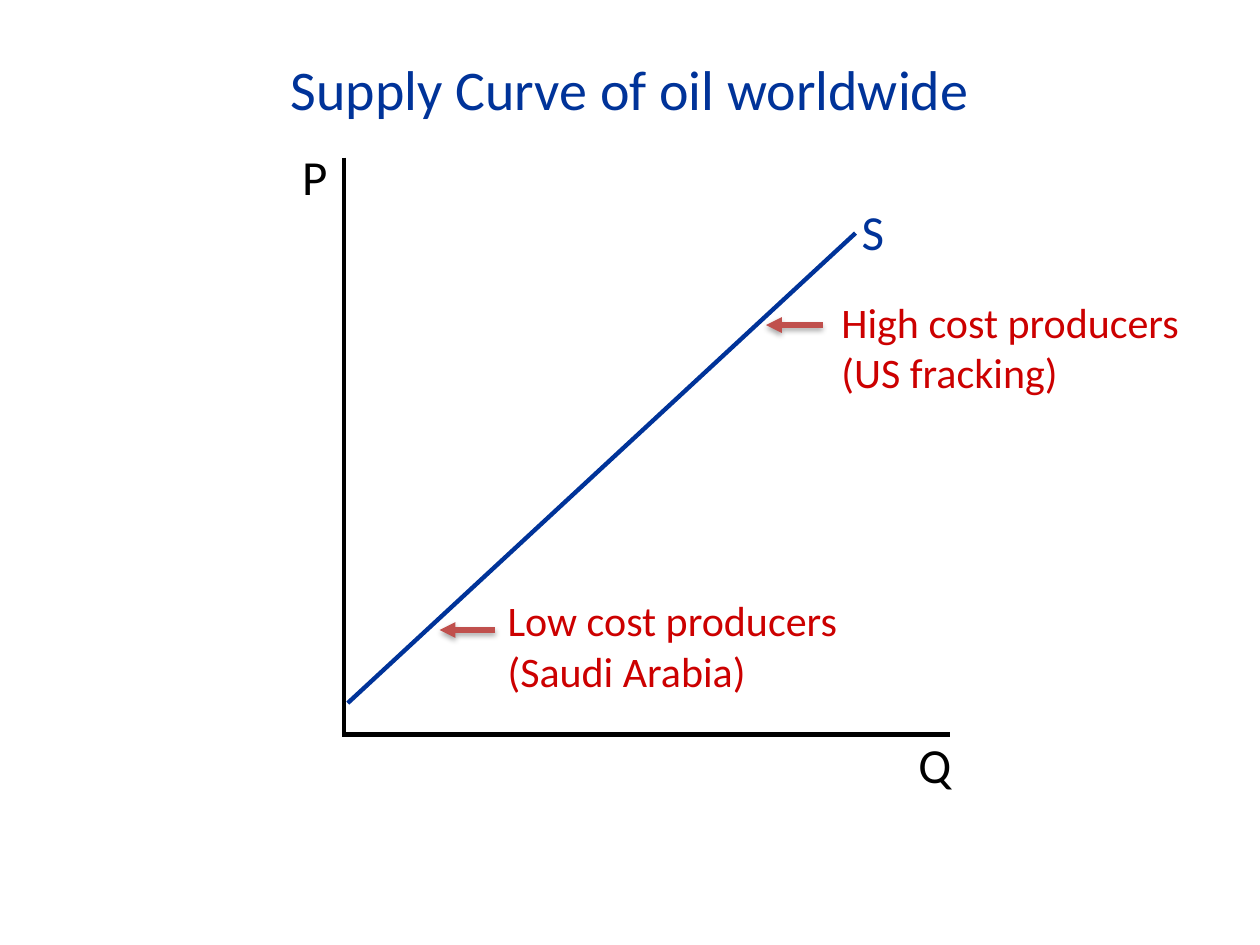
from dataclasses import dataclass

from lxml.etree import SubElement
from pptx import Presentation
from pptx.dml.color import RGBColor
from pptx.enum.shapes import MSO_CONNECTOR as Connector
from pptx.enum.text import MSO_ANCHOR as Anchor, MSO_AUTO_SIZE as AutoSize, PP_ALIGN as Align
from pptx.oxml.ns import qn
from pptx.util import Emu, Pt

PX = 9144  # EMU per px, 100 px to the inch


@dataclass(frozen=True)
class Theme:
    font: str = "Calibri"
    blue: str = "003399"
    black: str = "000000"
    red: str = "CC0000"
    arrow: str = "C0504D"
    title_size: int = 32
    label_size: int = 28
    note_size: int = 24
    line_width: float = 2.5
    arrow_width: float = 3


@dataclass(frozen=True)
class Label:
    lines: tuple[str, ...]
    left: int
    top: int
    width: int
    height: int
    size: int
    color: str
    align: Align = Align.LEFT
    anchor: Anchor = Anchor.TOP
    spacing: float = 1.0


@dataclass(frozen=True)
class Line:
    x1: int
    y1: int
    x2: int
    y2: int
    color: str
    width: float = Theme.line_width
    arrow: bool = False


@dataclass(frozen=True)
class Producer:
    lines: tuple[str, ...]
    left: int
    top: int
    arrow_from: int
    arrow_to: int
    arrow_y: int


T = Theme()

TITLE = Label(("Supply Curve of oil worldwide",), 70, 38, 860, 64,
              T.title_size, T.blue, Align.CENTER, Anchor.MIDDLE)
GRAPH_LINES = (
    Line(276, 558, 679, 185, T.blue),
    Line(273, 125, 273, 585, T.black),
    Line(274, 583, 754, 583, T.black),
)
GRAPH_LABELS = (
    Label(("Q",), 719, 578, 51, 57, T.label_size, T.black),
    Label(("P",), 230, 120, 45, 49, T.label_size, T.black, spacing=0.8),
    Label(("S",), 674, 155, 58, 57, T.label_size, T.blue),
)
PRODUCERS = (
    Producer(("Low cost producers", "(Saudi Arabia)"), 393, 467, 393, 349, 500),
    Producer(("High cost producers", "(US fracking)"), 658, 230, 653, 608, 258),
)


def px(n: int) -> Emu:
    return Emu(n * PX)


def add_label(shapes, label: Label) -> None:
    sp = shapes.add_textbox(px(label.left), px(label.top), px(label.width), px(label.height))
    tf = sp.text_frame
    tf.word_wrap = True
    tf.auto_size = AutoSize.SHAPE_TO_FIT_TEXT
    tf.vertical_anchor = label.anchor
    for i, text in enumerate(label.lines):
        p = tf.add_paragraph() if i else tf.paragraphs[0]
        p.alignment = label.align
        p.line_spacing = label.spacing
        r = p.add_run()
        r.text = text
        r.font.name = T.font
        r.font.size = Pt(label.size)
        r.font.color.rgb = RGBColor.from_string(label.color)


def add_line(shapes, line: Line) -> None:
    """Draw a plain line, or a shadowed arrow pointing at its end."""
    cx = shapes.add_connector(Connector.STRAIGHT, px(line.x1), px(line.y1),
                              px(line.x2), px(line.y2))
    cx.line.color.rgb = RGBColor.from_string(line.color)
    cx.line.width = Pt(line.width)
    sp_pr = cx._element.spPr
    effects = SubElement(sp_pr, qn("a:effectLst"))
    if line.arrow:
        SubElement(sp_pr.find(qn("a:ln")), qn("a:tailEnd"), type="triangle")
        shadow = SubElement(effects, qn("a:outerShdw"), blurRad="40000",
                            dist="23000", dir="5400000", rotWithShape="0")
        color = SubElement(shadow, qn("a:srgbClr"), val=T.black)
        SubElement(color, qn("a:alpha"), val="35000")


def add_producer(shapes, producer: Producer) -> None:
    add_label(shapes, Label(producer.lines, producer.left, producer.top, 375, 91,
                            T.note_size, T.red))
    add_line(shapes, Line(producer.arrow_from, producer.arrow_y, producer.arrow_to,
                          producer.arrow_y, T.arrow, T.arrow_width, arrow=True))


def main() -> None:
    prs = Presentation()
    prs.slide_width, prs.slide_height = px(1000), px(750)
    shapes = prs.slides.add_slide(prs.slide_layouts[6]).shapes
    add_label(shapes, TITLE)
    graph = shapes.add_group_shape().shapes
    for line in GRAPH_LINES:
        add_line(graph, line)
    for label in GRAPH_LABELS:
        add_label(graph, label)
    for producer in PRODUCERS:
        add_producer(shapes, producer)
    prs.save("out.pptx")


if __name__ == "__main__":
    main()
